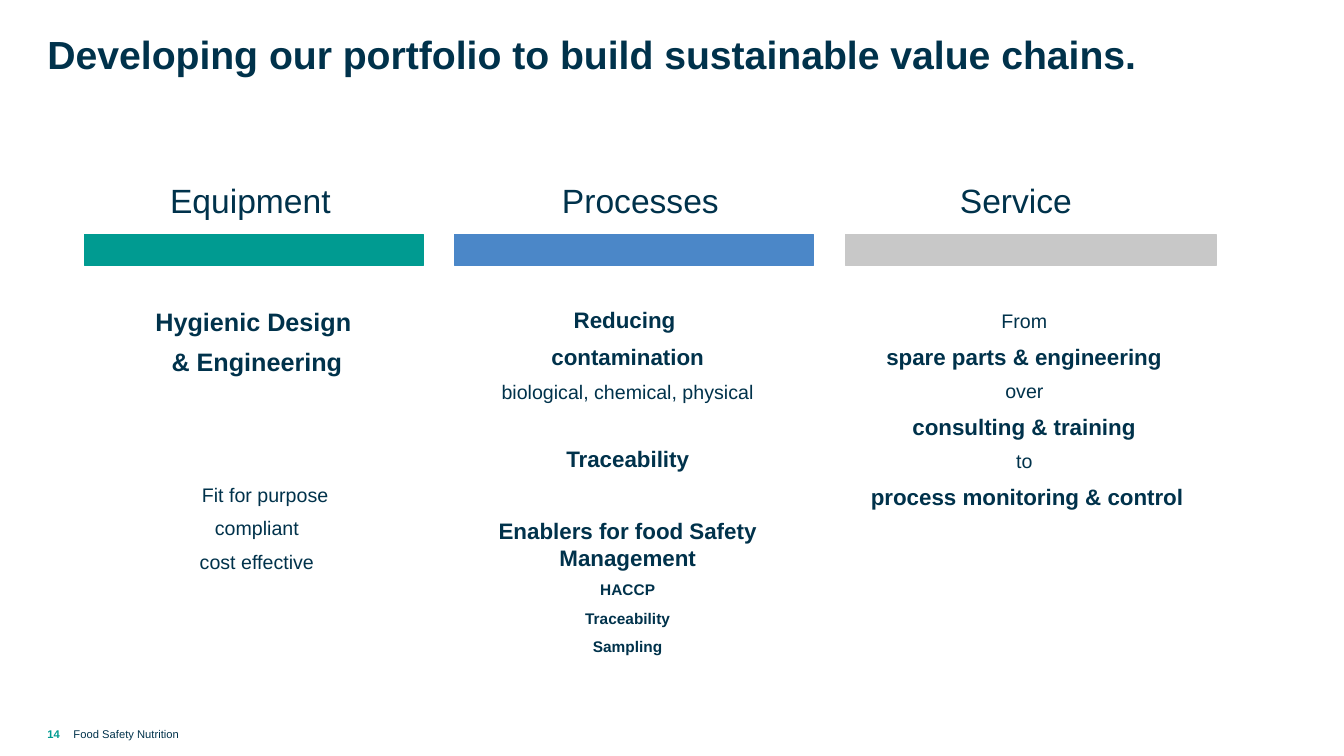
from pptx import Presentation
from pptx import util as u
from pptx.dml.color import RGBColor
from pptx.enum import shapes, text

PX = 9144  # 100 px to the inch
COLORS = {"navy": "00324B", "teal": "009B91", "blue": "4B87C8", "grey": "C8C8C8"}
GAP = 7  # points between paragraphs

# Heading: text, left, width; bar: left, width, colour
PILLARS = [
    ("Equipment", 159, 181, 84, 336, "teal"),
    ("Processes", 548, 177, 451, 357, "blue"),
    ("Service", 943, 133, 839, 368, "grey"),
]

# Box, then paragraphs: text, size, bold, optional extra formats
COLUMNS = [
    ((143, 299, 224, 337), [
        ("Hygienic Design ", 18, True),
        ("& Engineering", 18, True),
        ("Fit for purpose ", 14, False, {"before": 76, "indent": 22}),
        ("compliant", 14, False),
        ("cost effective", 14, False),
    ]),
    ((434, 299, 378, 407), [
        ("Reducing ", 16, True),
        ("contamination", 16, True),
        ("biological, chemical, physical", 14, False),
        ("Traceability", 16, True, {"before": 30}),
        ("Enablers for food Safety Management", 16, True, {"before": 32}),
        ("HACCP", 11, True),
        ("Traceability", 11, True),
        ("Sampling", 11, True),
    ]),
    ((825, 302, 389, 290), [
        ("From ", 14, False),
        ("spare parts & engineering ", 16, True),
        ("over ", 14, False),
        ("consulting & training ", 16, True),
        ("to ", 14, False),
        ("process monitoring & control", 16, True),
    ]),
]


def rgb(name):
    return RGBColor.from_string(COLORS[name])


def add_box(s, box, wrap=True, inset=True, anchor=text.MSO_ANCHOR.TOP):
    """Add an empty text box and return its text frame."""
    tf = s.shapes.add_textbox(*(v * PX for v in box)).text_frame
    tf.word_wrap = wrap
    tf.vertical_anchor = anchor
    if not inset:
        for side in ("left", "top", "right", "bottom"):
            setattr(tf, f"margin_{side}", 0)
    return tf


def write(p, words, size, bold=False, color="navy"):
    r = p.add_run()
    r.text = words
    formats = {"name": "Arial", "size": u.Pt(size), "bold": bold}
    for key, value in formats.items():
        setattr(r.font, key, value)
    r.font.color.rgb = rgb(color)


def add_label(s, box, words, size, bold=False, color="navy", **frame):
    write(add_box(s, box, **frame).paragraphs[0], words, size, bold, color)


def add_bar(s, left, width, color):
    sp = s.shapes.add_shape(shapes.MSO_SHAPE.RECTANGLE,
                            left * PX, 233 * PX, width * PX, 30 * PX)
    sp.shadow.inherit = False
    sp.fill.solid()
    sp.fill.fore_color.rgb = rgb(color)
    sp.line.color.rgb = rgb(color)
    sp.line.width = u.Pt(0.75)


def add_column(s, box, paragraphs):
    tf = add_box(s, box)
    for i, (words, size, bold, *extra) in enumerate(paragraphs):
        formats = extra[0] if extra else {}
        p = tf.add_paragraph() if i else tf.paragraphs[0]
        p.alignment = text.PP_ALIGN.CENTER
        if i:
            p.space_before = u.Pt(formats.get("before", GAP))
        if "indent" in formats:
            p._p.get_or_add_pPr().set("marL", str(formats["indent"] * PX))
        write(p, words, size, bold)


def main():
    prs = Presentation()
    prs.slide_width, prs.slide_height = 1334 * PX, 750 * PX
    s = prs.slides.add_slide(prs.slide_layouts[6])

    add_label(s, (47, 30, 1220, 98),
              "Developing our portfolio to build sustainable value chains.",
              28, True, inset=False)
    for heading, left, width, bar_left, bar_width, color in PILLARS:
        add_bar(s, bar_left, bar_width, color)
        add_label(s, (left, 174, width, 50), heading, 24, wrap=False)
    for box, paragraphs in COLUMNS:
        add_column(s, box, paragraphs)

    footer = {"inset": False, "anchor": text.MSO_ANCHOR.MIDDLE}
    add_label(s, (47, 718, 36, 20), "14", 8, True, "teal", **footer)
    add_label(s, (73, 718, 866, 20), "Food Safety Nutrition", 8, **footer)
    prs.save("out.pptx")


if __name__ == "__main__":
    main()
